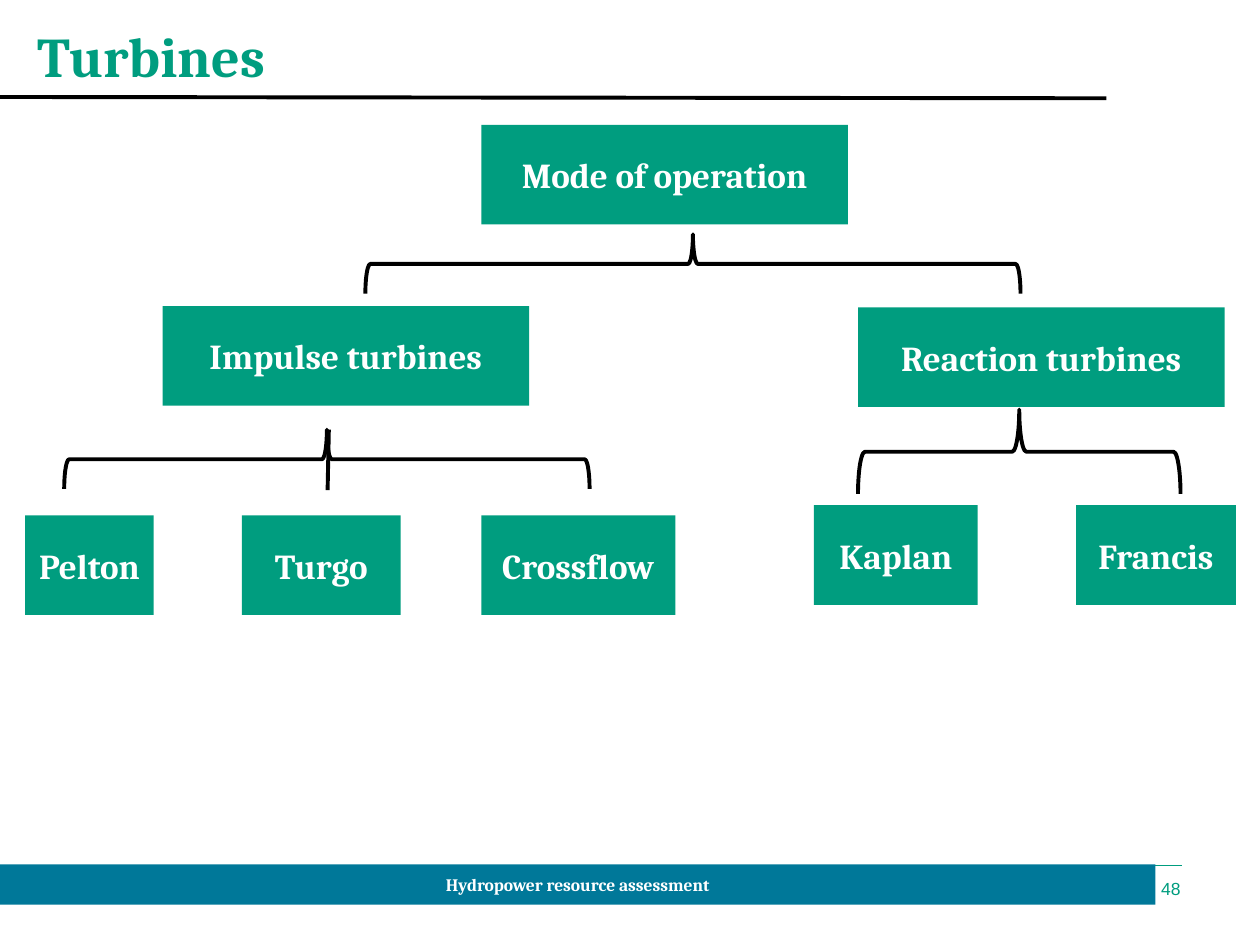
import pptx
import pptx.util
import pptx.dml.color
import pptx.enum.shapes
import pptx.enum.text
import lxml.etree
from pptx.util import Inches

GREEN, BLUE, WHITE, BLACK = "009D7F", "007899", "FFFFFF", "000000"
SHAPES = pptx.enum.shapes.MSO_SHAPE
ALIGN = pptx.enum.text.PP_ALIGN
ANCHOR = pptx.enum.text.MSO_ANCHOR

NODE_HEIGHT = 0.79
NODES = [
    ("Mode of operation", 3.82, 0.99, 2.91),
    ("Impulse turbines", 1.29, 2.43, 2.91),
    ("Reaction turbines", 6.81, 2.44, 2.91),
    ("Pelton", 0.2, 4.09, 1.02),
    ("Turgo", 1.92, 4.09, 1.26),
    ("Crossflow", 3.82, 4.09, 1.54),
    ("Kaplan", 6.46, 4.01, 1.3),
    ("Francis", 8.54, 4.01, 1.27),
]
BRACES = [
    (0.51, 3.41, 4.17, 0.47),
    (6.81, 3.25, 2.56, 0.67),
    (2.9, 1.86, 5.2, 0.47),
]
FOOTER_RULE = (0.63, 6.87, 9.38, 6.87, GREEN, 1)
RULES = [
    (0, 0.77, 8.78, 0.78, BLACK, 2.25),
    (2.61, 3.41, 2.6, 3.89, BLACK, 2.25),
]


def color(value):
    return pptx.dml.color.RGBColor.from_string(value)


def write(box, text, size, ink, align, anchor, font="Cambria", bold=True):
    frame = box.text_frame
    frame.word_wrap = True
    frame.vertical_anchor = anchor
    para = frame.paragraphs[0]
    para.alignment = align
    span = para.add_run()
    span.text = text
    span.font.name = font
    span.font.size = pptx.util.Pt(size)
    span.font.bold = bold
    span.font.color.rgb = color(ink)


def add_text(page, left, top, width, height):
    return page.shapes.add_textbox(Inches(left), Inches(top), Inches(width), Inches(height))


def add_block(page, text, left, top, width, height, fill, size):
    block = page.shapes.add_shape(
        SHAPES.RECTANGLE, Inches(left), Inches(top), Inches(width), Inches(height))
    block.shadow.inherit = False
    block.fill.solid()
    block.fill.fore_color.rgb = color(fill)
    block.line.fill.background()
    write(block, text, size, WHITE, ALIGN.CENTER, ANCHOR.MIDDLE)


def add_brace(page, left, top, span, depth):
    center_x, center_y = left + span / 2, top + depth / 2
    brace = page.shapes.add_shape(
        SHAPES.RIGHT_BRACE, Inches(center_x - depth / 2), Inches(center_y - span / 2),
        Inches(depth), Inches(span))
    brace.rotation = 270
    brace.shadow.inherit = False
    brace.fill.background()
    brace.line.color.rgb = color(BLACK)
    brace.line.width = pptx.util.Pt(2.25)


def add_rule(page, x1, y1, x2, y2, ink, weight):
    rule = page.shapes.add_connector(
        pptx.enum.shapes.MSO_CONNECTOR.STRAIGHT, Inches(x1), Inches(y1), Inches(x2), Inches(y2))
    rule.line.color.rgb = color(ink)
    rule.line.width = pptx.util.Pt(weight)
    lxml.etree.SubElement(rule._element.spPr, pptx.oxml.ns.qn("a:effectLst"))


def main():
    deck = pptx.Presentation()
    deck.slide_width, deck.slide_height = Inches(10), Inches(7.5)
    page = deck.slides.add_slide(deck.slide_layouts[6])

    add_rule(page, *FOOTER_RULE)
    number = add_text(page, 9.04, 6.97, 0.33, 0.17)
    frame = number.text_frame
    frame.margin_left = frame.margin_right = frame.margin_top = frame.margin_bottom = 0
    write(number, "48", 10, GREEN, ALIGN.RIGHT, ANCHOR.MIDDLE, "Arial", False)
    add_block(page, "Hydropower resource assessment", 0, 6.86, 9.17, 0.32, BLUE, 10)

    title = add_text(page, 0.2, 0.12, 7.92, 0.64)
    write(title, "Turbines", 32, GREEN, ALIGN.LEFT, ANCHOR.TOP)

    for text, left, top, width in NODES:
        add_block(page, text, left, top, width, NODE_HEIGHT, GREEN, 20)
    for brace in BRACES:
        add_brace(page, *brace)
    for rule in RULES:
        add_rule(page, *rule)

    deck.save("out.pptx")


if __name__ == "__main__":
    main()
